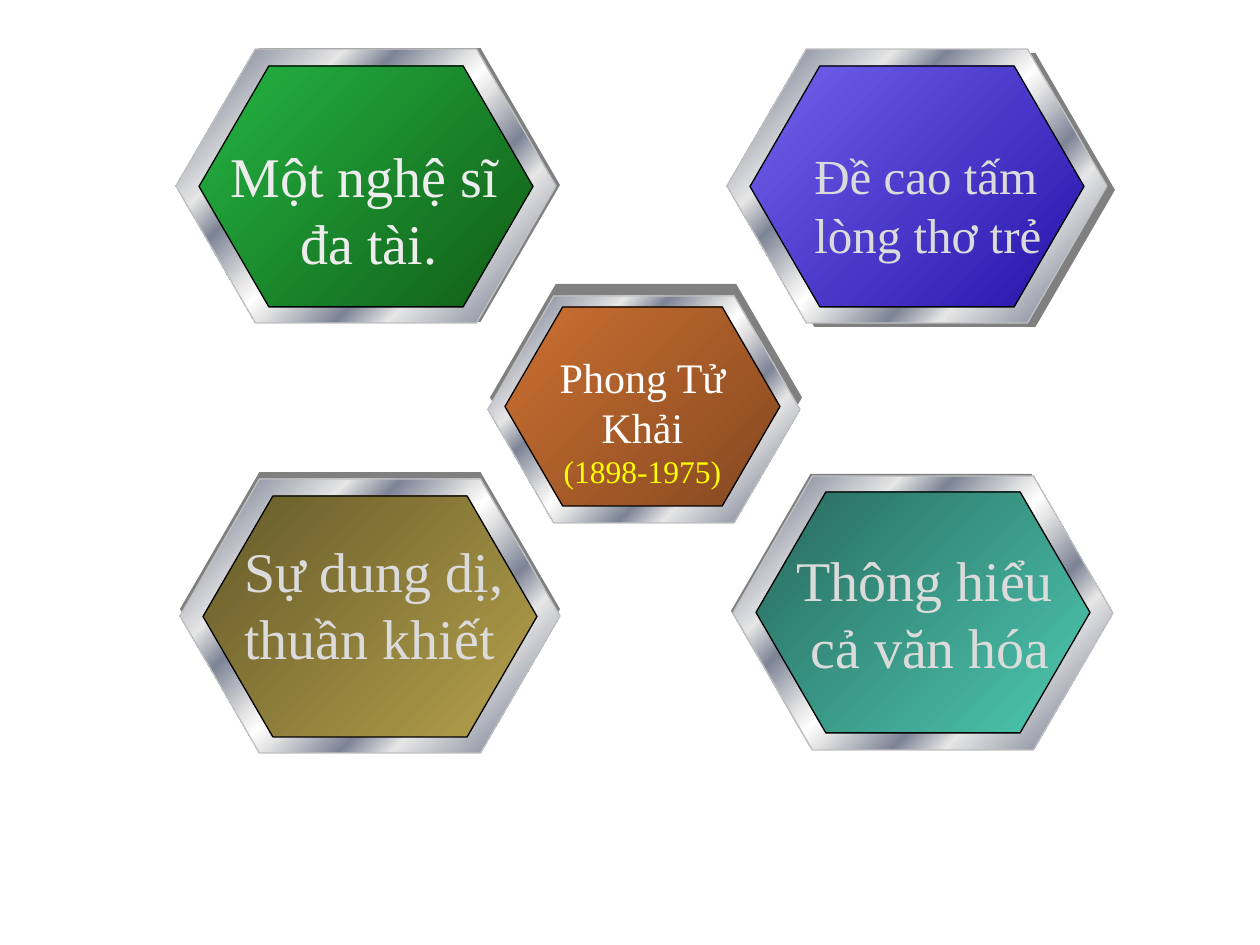
import pptx
import pptx.util
import pptx.oxml
import pptx.oxml.ns
import pptx.dml.color
import pptx.enum.shapes
import pptx.enum.text

THEME = {
    "font": "Times New Roman",
    "shadow": "808080", "ring_line": "C0C0C0", "face_line": "000000",
    "ring": [(0, "E6E6E6"), (7, "7D8496"), (26, "E6E6E6"), (34, "7D8496"),
             (46, "E6E6E6"), (50, "FFFFFF"), (54, "E6E6E6"), (66, "7D8496"),
             (74, "E6E6E6"), (93, "7D8496"), (100, "E6E6E6")],
    "blue": [(0, "7262EC"), (100, "2614AA")],
    "green": [(0, "24B443"), (100, "115D16")],
    "orange": [(0, "CC7032"), (100, "844820")],
    "teal": [(0, "28695D"), (100, "4DC9B1")],
    "olive": [(0, "655A2A"), (100, "B5A14B")],
    "white": "FFFFFF", "light": "EDEDED", "grey": "DBDBDB", "yellow": "FFFF00",
    "large": 32, "medium": 28, "name": 24, "years": 18,
}
RGB = pptx.dml.color.RGBColor.from_string


def px(n):
    return round(n * 914400 / 126)


def add_hexagon(box, fill, line=None):
    """Draw a hexagon with a plain colour or a list of gradient stops."""
    sp = slide.shapes.add_shape(pptx.enum.shapes.MSO_SHAPE.HEXAGON, *map(px, box))
    sp.adjustments[0] = 0.29
    sp.shadow.inherit = False
    if isinstance(fill, str):
        sp.fill.solid()
        sp.fill.fore_color.rgb = RGB(fill)
    else:
        stops = "".join(f'<a:gs pos="{pos * 1000}"><a:srgbClr val="{color}"/></a:gs>'
                        for pos, color in fill)
        grad = pptx.oxml.parse_xml(
            f'<a:gradFill {pptx.oxml.ns.nsdecls("a")} rotWithShape="1">'
            f'<a:gsLst>{stops}</a:gsLst><a:lin ang="2700000" scaled="1"/></a:gradFill>')
        sp._element.spPr.find(pptx.oxml.ns.qn("a:prstGeom")).addnext(grad)
    if line:
        sp.line.color.rgb = RGB(line)
        sp.line.width = pptx.util.Pt(0.75)
    else:
        sp.line.fill.background()


def add_text(box, lines, align, wrap):
    """Write lines of (text, indent in px, size, colour)."""
    tf = slide.shapes.add_textbox(*map(px, box)).text_frame
    tf.word_wrap = wrap
    for i, (text, indent, size, color) in enumerate(lines):
        p = tf.paragraphs[0] if i == 0 else tf.add_paragraph()
        p.alignment = align
        if indent:
            p._p.get_or_add_pPr().set("marL", str(px(indent)))
        r = p.add_run()
        r.text = text
        r.font.name = THEME["font"]
        r.font.size = pptx.util.Pt(THEME[size])
        r.font.color.rgb = RGB(THEME[color])


prs = pptx.Presentation()
prs.slide_width, prs.slide_height = px(1260), px(945)
slide = prs.slides.add_slide(prs.slide_layouts[6])

# Hexagon badges: shadow, metal ring and coloured face
OUTER, INNER = (380, 274), (334, 241)
badges = [
    ("blue", (735, 53), (727, 49), (750, 66), OUTER, INNER),
    ("green", (180, 48), (176, 49), (199, 66), OUTER, INNER),
    ("orange", (490, 284), (488, 296), (505, 307), (312, 227), (275, 199)),
    ("teal", (731, 474), (733, 476), (756, 492), OUTER, INNER),
    ("olive", (180, 472), (180, 479), (203, 496), OUTER, INNER),
]
for color, shadow, ring, face, outer, inner in badges:
    add_hexagon(shadow + outer, THEME["shadow"])
    add_hexagon(ring + outer, THEME["ring"], THEME["ring_line"])
    add_hexagon(face + inner, THEME[color], THEME["face_line"])

# Name and years in the centre
add_text((541, 345, 203, 152),
         [("Phong Tử", 0, "name", "white"), ("Khải", 0, "name", "white"),
          ("(1898-1975)", 0, "years", "yellow")],
         pptx.enum.text.PP_ALIGN.CENTER, False)

# Four themes around the centre
labels = [
    ((218, 135, 310, 149), "large", "light", [("Một nghệ sĩ", 0), ("đa tài.", 70)]),
    ((802, 139, 310, 131), "medium", "grey", [("Đề cao tấm", 0), ("lòng thơ trẻ", 0)]),
    ((232, 530, 310, 149), "large", "grey", [("Sự dung dị,", 0), ("thuần khiết", 0)]),
    ((784, 539, 310, 149), "large", "grey", [("Thông hiểu", 0), ("cả văn hóa", 14)]),
]
for box, size, color, lines in labels:
    add_text(box, [(text, indent, size, color) for text, indent in lines],
             pptx.enum.text.PP_ALIGN.LEFT, True)

prs.save("out.pptx")
